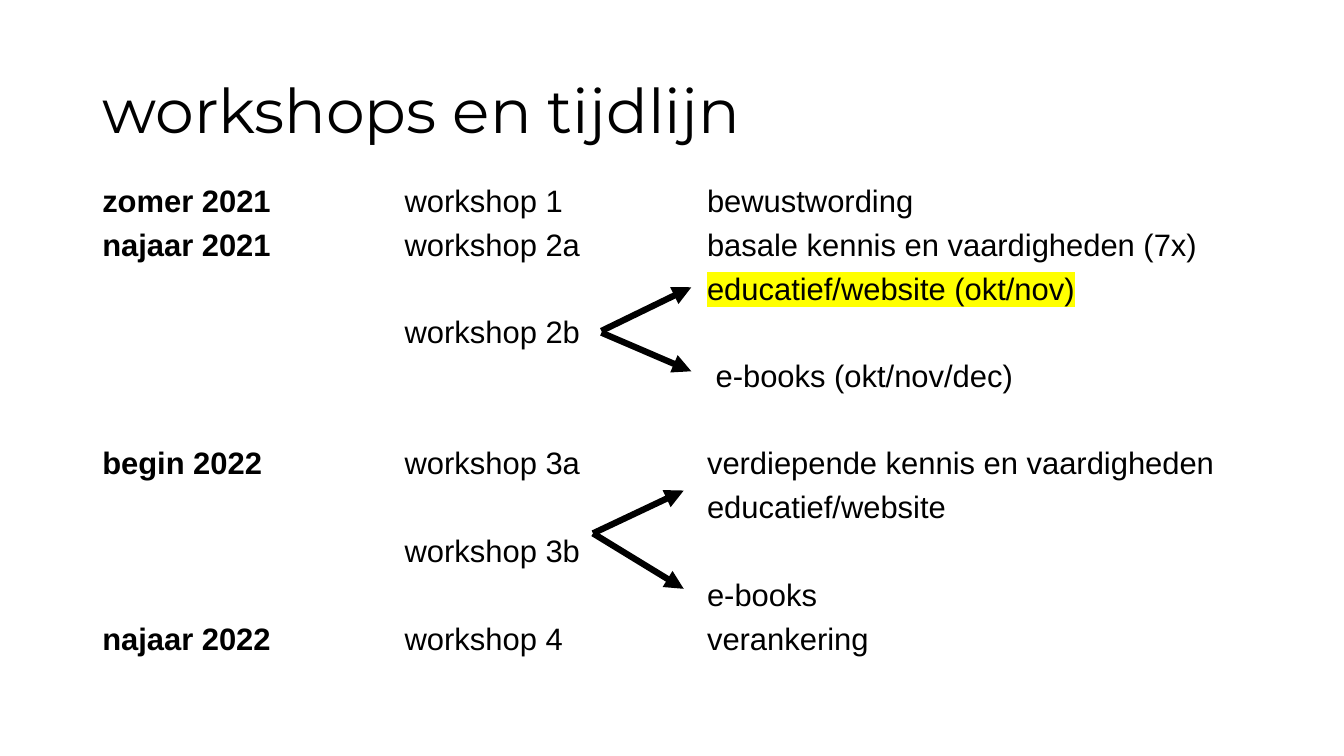
from lxml.etree import SubElement
from pptx import Presentation
from pptx.dml.color import RGBColor
from pptx.enum.shapes import MSO_CONNECTOR
from pptx.enum.text import MSO_ANCHOR
from pptx.oxml import parse_xml
from pptx.oxml.ns import nsdecls, qn
from pptx.util import Inches, Pt

CELL = 1 / 12
BLACK = "000000"
YELLOW = "FFFF00"

SCHEDULE = [
    ("zomer 2021", "workshop 1", "bewustwording"),
    ("najaar 2021", "workshop 2a", "basale kennis en vaardigheden (7x)"),
    ("", "", "educatief/website (okt/nov)"),
    ("", "workshop 2b", ""),
    ("", "", " e-books (okt/nov/dec)"),
    ("begin 2022", "workshop 3a", "verdiepende kennis en vaardigheden"),
    ("", "", "educatief/website"),
    ("", "workshop 3b", ""),
    ("", "", "e-books"),
    ("najaar 2022", "workshop 4", "verankering"),
]
HIGHLIGHTED = "educatief/website (okt/nov)"
YEAR_START = "begin 2022"

ARROWS = [
    ((71.6, 39.4), (82.3, 34.2)),
    ((71.6, 39.6), (82.3, 44.2)),
    ((70.6, 63.5), (81.4, 58.4)),
    ((70.6, 63.5), (81.4, 70.1)),
]


def color(value):
    return RGBColor.from_string(value)


def grid(*cells):
    return [Inches(n * CELL) for n in cells]


class Deck:
    title_font, title_size = "Montserrat", 44
    body_font, body_size = "Arial", 22.1
    gap, row_pitch = 12.8, 30.6

    def __init__(self):
        self.prs = Presentation()
        self.prs.slide_width, self.prs.slide_height = grid(160, 90)
        self.s = self.prs.slides.add_slide(self.prs.slide_layouts[6])

    def frame(self, box, anchor):
        tf = self.s.shapes.add_textbox(*grid(*box)).text_frame
        tf.word_wrap = True
        tf.vertical_anchor = anchor
        return tf

    def style(self, p, name, size):
        p.font.name = name
        p.font.size = Pt(size)
        p.font.color.rgb = color(BLACK)

    def title(self, text, box):
        p = self.frame(box, MSO_ANCHOR.MIDDLE).paragraphs[0]
        p.text = text
        p.line_spacing = 0.9
        self.style(p, self.title_font, self.title_size)

    def tabs(self, p, stops):
        tabs = SubElement(p._p.get_or_add_pPr(), qn("a:tabLst"))
        for stop in grid(*stops):
            SubElement(tabs, qn("a:tab"), pos=str(stop), algn="l")

    def highlight(self, r, value):
        r._r.get_or_add_rPr().append(parse_xml(
            f'<a:highlight {nsdecls("a")}><a:srgbClr val="{value}"/></a:highlight>'))

    def schedule(self, rows, box, stops):
        tf = self.frame(box, MSO_ANCHOR.TOP)
        for i, (period, workshop, topic) in enumerate(rows):
            p = tf.add_paragraph() if i else tf.paragraphs[0]
            self.tabs(p, stops)
            p.line_spacing = 0.7
            if i:
                extra = self.row_pitch if period == YEAR_START else 0
                p.space_before = Pt(self.gap + extra)
            self.style(p, self.body_font, self.body_size)
            if period:
                r = p.add_run()
                r.text = period
                r.font.bold = True
            p.add_run().text = f"\t{workshop}" + ("\t" if topic else "")
            if topic:
                r = p.add_run()
                r.text = topic
                if topic == HIGHLIGHTED:
                    self.highlight(r, YELLOW)

    def arrow(self, start, end):
        line = self.s.shapes.add_connector(
            MSO_CONNECTOR.STRAIGHT, *grid(*start, *end))
        line.line.color.rgb = color(BLACK)
        line.line.width = Pt(4.5)
        SubElement(line.line._get_or_add_ln(), qn("a:tailEnd"), type="triangle")
        SubElement(line._element.spPr, qn("a:effectLst"))


def main():
    deck = Deck()
    deck.title("workshops en tijdlijn", (11, 4.8, 138, 17.4))
    deck.schedule(SCHEDULE, (11, 22.2, 138, 59.3), (36, 72))
    for start, end in ARROWS:
        deck.arrow(start, end)
    deck.prs.save("out.pptx")


if __name__ == "__main__":
    main()
